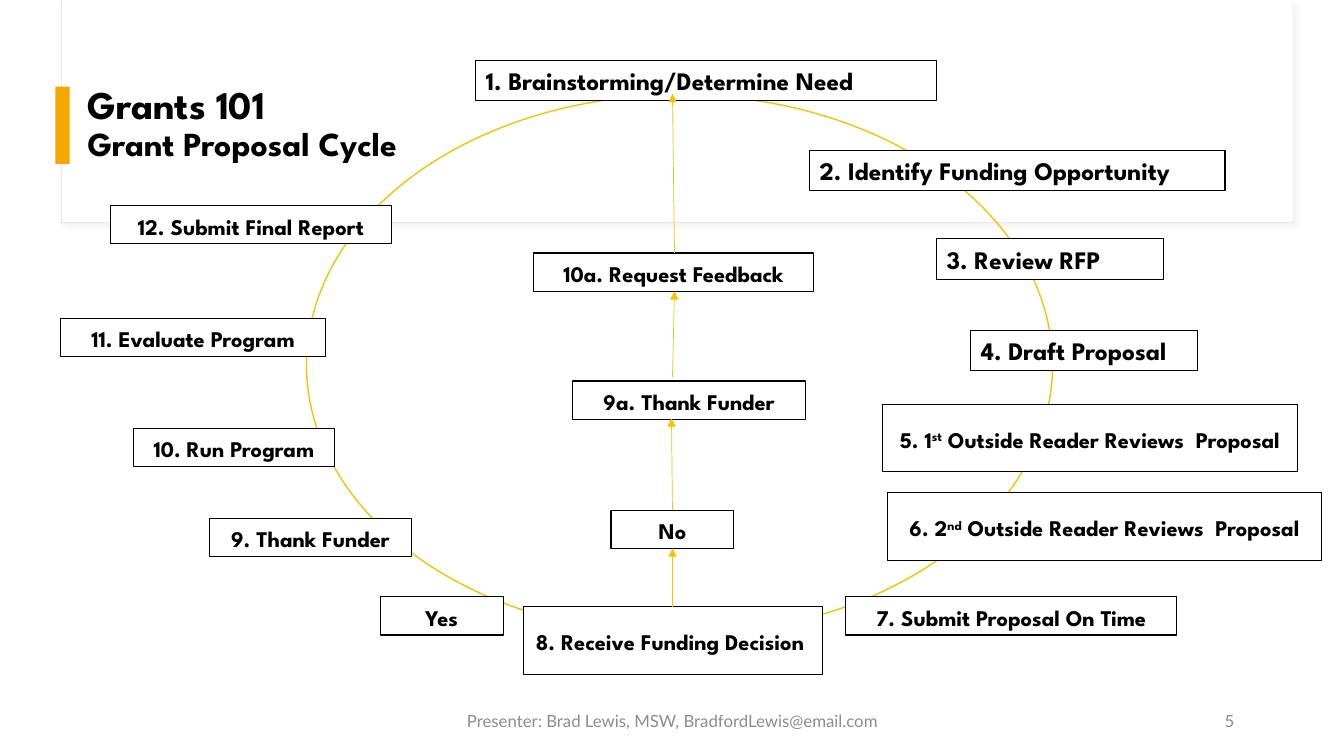
import pptx
import pptx.util
import pptx.dml.color
import pptx.enum.shapes
import pptx.enum.text
import pptx.oxml
import pptx.oxml.ns

HUES = {"white": "FFFFFF", "black": "000000", "edge": "E9E9E9", "bar": "F5A700",
        "gold": "FFC000", "grey": "8C8C8C", "shade": "D9D9D9"}
HEAD = "League Spartan"
BODY = "Lato"
TITLE = [("Grants 101 ", 28), ("Grant Proposal Cycle", 24)]
RING = (3.04, 0.94, 7.4, 5.36)
LARGE = [
    ("1. Brainstorming/Determine Need", 4.72, 0.6, 4.57),
    ("2. Identify Funding Opportunity", 8.03, 1.49, 4.12),
    ("3. Review RFP", 9.29, 2.37, 2.25),
    ("4. Draft Proposal", 9.63, 3.28, 2.25),
]
TALL = [
    (("5. 1", "st", " Outside Reader Reviews  Proposal"), 8.75, 4.01, 4.12),
    (("6. 2", "nd", " Outside Reader Reviews  Proposal"), 8.8, 4.89, 4.31),
    ("8. Receive Funding Decision ", 5.19, 6.02, 2.97),
]
SMALL = [
    ("7. Submit Proposal On Time", 8.39, 5.92, 3.28),
    ("9. Thank Funder", 2.08, 5.14, 2),
    ("10. Run Program", 1.32, 4.25, 2),
    ("11. Evaluate Program", 0.6, 3.16, 2.63),
    ("12. Submit Final Report", 1.1, 2.04, 2.78),
    ("Yes", 3.77, 5.92, 1.22),
    ("9a. Thank Funder", 5.68, 3.78, 2.31),
    ("10a. Request Feedback", 5.29, 2.51, 2.78),
    ("No", 6.06, 5.06, 1.22),
]
ARROWS = [
    (6.67, 6.02, 6.67, 5.44),
    (6.67, 5.06, 6.66, 4.15),
    (6.67, 3.74, 6.69, 2.89),
    (6.69, 2.51, 6.67, 0.93),
]
FOOT = [
    ("Presenter: Brad Lewis, MSW, BradfordLewis@email.com", 4.42, 4.5, "CENTER"),
    ("5", 9.34, 3, "RIGHT"),
]

Inches = pptx.util.Inches
Pt = pptx.util.Pt
Kind = pptx.enum.shapes.MSO_SHAPE
Align = pptx.enum.text.PP_ALIGN
Anchor = pptx.enum.text.MSO_ANCHOR
Fit = pptx.enum.text.MSO_AUTO_SIZE

deck = pptx.Presentation()
deck.slide_width = Inches(13.33)
deck.slide_height = Inches(7.5)
slide = deck.slides.add_slide(deck.slide_layouts[6])


def hue(name):
    return pptx.dml.color.RGBColor.from_string(HUES[name])


def place(spot):
    return [Inches(n) for n in spot]


def draw(spot, fill=None, line=None, width=0.75, kind=Kind.RECTANGLE):
    shape = slide.shapes.add_shape(kind, *place(spot))
    shape.shadow.inherit = False
    if fill:
        shape.fill.solid()
        shape.fill.fore_color.rgb = hue(fill)
    else:
        shape.fill.background()
    if line:
        shape.line.color.rgb = hue(line)
        shape.line.width = Pt(width)
    else:
        shape.line.fill.background()
    return shape


def style(font, face, size, color, bold=False):
    font.name = face
    if size:
        font.size = Pt(size)
    font.bold = bold
    font.color.rgb = hue(color)


def label(text, left, top, width, height, size, mid=True):
    frame = draw((left, top, width, height), "white", "black").text_frame
    frame.word_wrap = True
    frame.auto_size = Fit.SHAPE_TO_FIT_TEXT
    frame.vertical_anchor = Anchor.MIDDLE if mid else Anchor.TOP
    para = frame.paragraphs[0]
    para.alignment = Align.CENTER if mid else Align.LEFT
    if mid:
        para.line_spacing = 1.1
        para.space_before = Pt(10)
    style(para.font, HEAD, size, "black", True)
    parts = (text,) if isinstance(text, str) else text
    for i, part in enumerate(parts):
        run = para.add_run()
        run.text = part
        if i == 1:
            run.font._element.set("baseline", "30000")


def write(spot):
    frame = slide.shapes.add_textbox(*place(spot)).text_frame
    frame.word_wrap = True
    frame.vertical_anchor = Anchor.MIDDLE
    return frame.paragraphs[0]


def arrow(ends):
    link = slide.shapes.add_connector(
        pptx.enum.shapes.MSO_CONNECTOR.STRAIGHT, *place(ends))
    link.line.color.rgb = hue("gold")
    link.line.width = Pt(0.5)
    tip = pptx.oxml.ns.qn("a:tailEnd")
    link.line._get_or_add_ln().makeelement(tip)
    tail = pptx.oxml.parse_xml(
        f'<a:tailEnd {pptx.oxml.ns.nsdecls("a")} type="triangle"/>')
    link.line._get_or_add_ln().append(tail)
    link._element.spPr.append(pptx.oxml.parse_xml(
        f'<a:effectLst {pptx.oxml.ns.nsdecls("a")}/>'))


def shade(shape):
    glow = pptx.oxml.parse_xml(
        f'<a:outerShdw {pptx.oxml.ns.nsdecls("a")} blurRad="50800" dist="38100" '
        f'dir="2700000"><a:srgbClr val="{HUES["shade"]}"><a:alpha val="30000"/>'
        '</a:srgbClr></a:outerShdw>')
    shape._element.spPr.find(pptx.oxml.ns.qn("a:effectLst")).append(glow)


shade(draw((0.61, 0, 12.21, 2.21), "white", "edge"))
draw((0.62, 0, 12.2, 2.2), "white")
draw((0.55, 0.86, 0.14, 0.77), "bar")

title = write((0.77, 0.59, 11.57, 1.29))
title.line_spacing = 0.9
style(title.font, HEAD, None, "black", True)
for i, (text, size) in enumerate(TITLE):
    if i:
        title.add_line_break()
    run = title.add_run()
    run.text = text
    run.font.size = Pt(size)

draw(RING, line="gold", width=1, kind=Kind.OVAL)
for item in LARGE:
    label(*item, 0.4, 18, False)
for item in TALL:
    label(*item, 0.67, 16)
for item in SMALL:
    label(*item, 0.38, 16)
for ends in ARROWS:
    arrow(ends)

for text, left, width, side in FOOT:
    para = write((left, 6.95, width, 0.4))
    para.text = text
    para.alignment = Align[side]
    style(para.font, BODY, 12, "grey")

deck.save("out.pptx")
